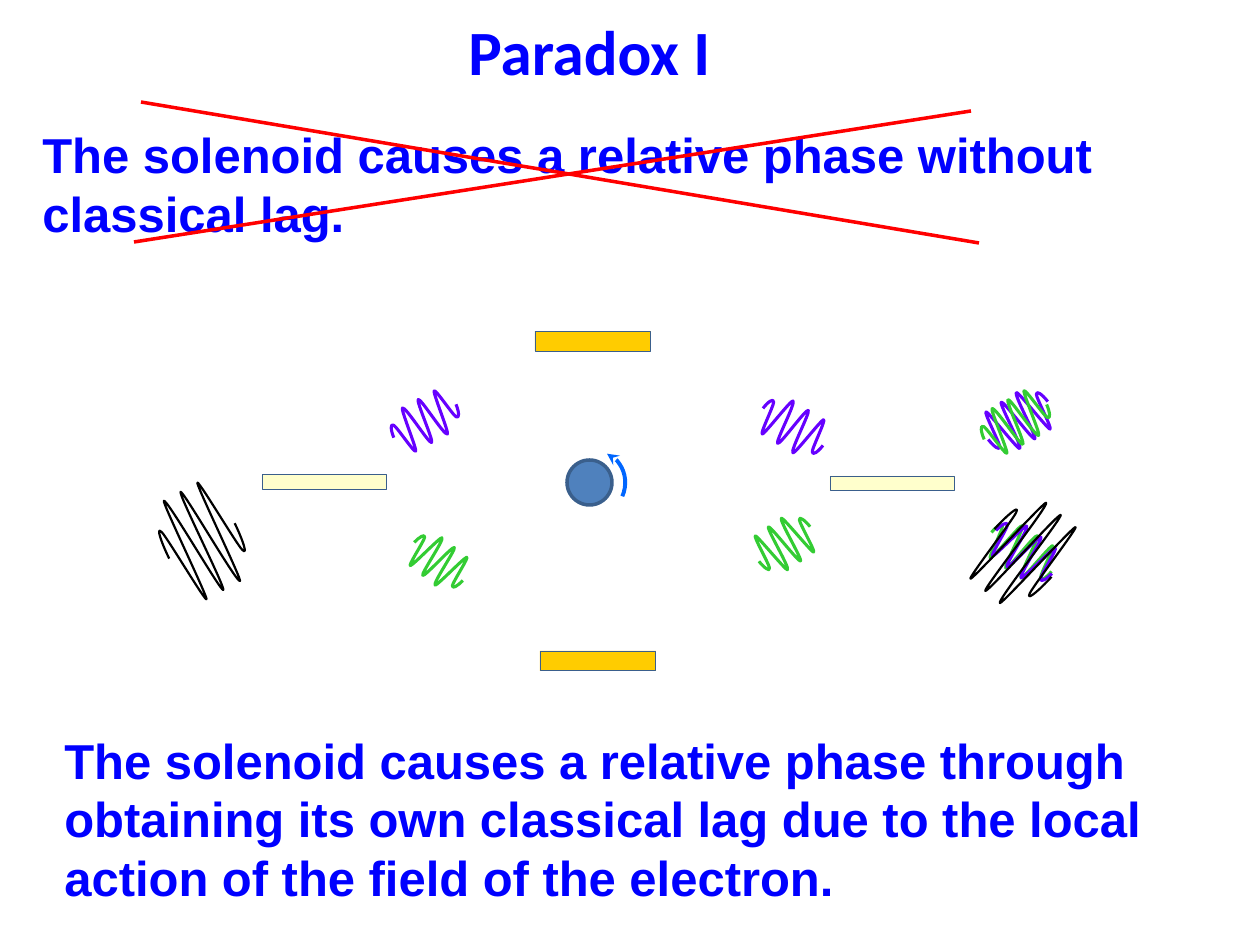
from pptx import Presentation
from pptx.dml.color import RGBColor
from pptx.enum.shapes import MSO_CONNECTOR, MSO_SHAPE
from pptx.enum.text import MSO_AUTO_SIZE
from pptx.oxml.ns import qn
from pptx.util import Emu, Pt
from lxml import etree

RECT, OVAL, ARC = MSO_SHAPE.RECTANGLE, MSO_SHAPE.OVAL, MSO_SHAPE.ARC
STRAIGHT = MSO_CONNECTOR.STRAIGHT
GROW = MSO_AUTO_SIZE.SHAPE_TO_FIT_TEXT
SCALE = 914400 / 126

THEME = {
    "text": "0000FF", "cross": "FF0000", "edge": "3A5F8C",
    "plate": "FFFFCC", "mirror": "FFCC00", "coil": "4F81BD", "spin": "0066FF",
    "black": "000000", "violet": "6600FF", "green": "33CC33",
    "title": {"name": "Calibri", "size": Pt(36), "bold": True},
    "body": {"name": "Arial", "size": Pt(28), "bold": True},
}

# First half of the wave in a unit box; the second half is its point mirror
HALF = [
    (0.01, 0.5), (0.02, 0.34), (0.06, 0.19), (0.09, 0.27), (0.12, 0.34),
    (0.16, 1), (0.19, 0.96), (0.22, 0.92), (0.28, 0.04), (0.31, 0.04),
    (0.36, 0.03), (0.4, 0.96), (0.44, 0.96), (0.48, 0.96),
]
WAVE = HALF + [(1 - x, 1 - y) for x, y in reversed(HALF)]

# Box, turn, flip, colour, line width
PACKETS = [
    ((389, 397, 72, 48), 331.8, False, "violet", 1.75),
    ((407, 539, 63, 45), 38.2, False, "green", 1.75),
    ((164, 483, 76, 116), 331.6, False, "black", 1.25),
    ((985, 528, 73, 48), 33, False, "green", 1.75),
    ((988, 528, 72, 48), 37.7, False, "violet", 1.75),
    ((757, 403, 72, 48), 31.7, False, "violet", 1.75),
    ((753, 519, 63, 50), 325.9, True, "green", 1.75),
    ((982, 394, 72, 53), 147.5, True, "violet", 1.75),
    ((979, 397, 73, 50), 330.8, False, "green", 1.75),
    ((985, 495, 76, 116), 39.9, False, "black", 1.25),
]


def px(n):
    return Emu(round(n * SCALE))


def color(key):
    return RGBColor.from_string(THEME[key])


def stroke(item, key, width):
    item.line.color.rgb = color(key)
    item.line.width = Pt(width)


def add_shape(slide, kind, box, fill, edge, width):
    shape = slide.shapes.add_shape(kind, *map(px, box))
    shape.shadow.inherit = False
    if fill:
        shape.fill.solid()
        shape.fill.fore_color.rgb = color(fill)
    else:
        shape.fill.background()
    stroke(shape, edge, width)
    return shape


def add_wave(slide, box, turn, flip, key, width):
    left, top, wide, high = box
    dots = [(px(left + x * wide), px(top + (1 - y if flip else y) * high))
            for x, y in WAVE]
    pen = slide.shapes.build_freeform(*dots[0])
    pen.add_line_segments(dots[1:], close=False)
    shape = pen.convert_to_shape()
    # Each three line steps become one cubic curve
    steps = list(shape.element.iter(qn("a:lnTo")))
    for i in range(0, len(steps), 3):
        curve = etree.Element(qn("a:cubicBezTo"))
        steps[i].addprevious(curve)
        for step in steps[i:i + 3]:
            curve.append(step[0])
            step.getparent().remove(step)
    shape.shadow.inherit = False
    shape.fill.background()
    stroke(shape, key, width)
    shape.rotation = turn


def add_line(slide, start, end):
    line = slide.shapes.add_connector(STRAIGHT, *map(px, start + end))
    stroke(line, "cross", 2)
    etree.SubElement(line.element.spPr, qn("a:effectLst"))


def add_spin(slide):
    arc = add_shape(slide, ARC, (563, 451, 62, 66), None, "spin", 2.25)
    arc.rotation = 23.5
    head = etree.SubElement(arc.line._get_or_add_ln(), qn("a:headEnd"))
    head.set("type", "stealth")


def add_text(slide, box, words, style, wrap=True):
    frame = slide.shapes.add_textbox(*map(px, box)).text_frame
    for name, value in {"word_wrap": wrap, "auto_size": GROW}.items():
        setattr(frame, name, value)
    run = frame.paragraphs[0].add_run()
    run.text = words
    for name, value in THEME[style].items():
        setattr(run.font, name, value)
    run.font.color.rgb = color("text")


def main():
    deck = Presentation()
    deck.slide_width, deck.slide_height = px(1260), px(945)
    slide = deck.slides.add_slide(deck.slide_layouts[6])

    # Beam splitters and mirrors
    for left, top in ((262, 475), (830, 476)):
        add_shape(slide, RECT, (left, top, 125, 15), "plate", "edge", 0.5)
    for left, top in ((535, 331), (540, 651)):
        add_shape(slide, RECT, (left, top, 116, 20), "mirror", "edge", 0.5)

    # Wave packets
    for packet in PACKETS:
        add_wave(slide, *packet)

    # Solenoid
    add_shape(slide, OVAL, (567, 460, 45, 45), "coil", "edge", 2)

    # Statements, the first one crossed out
    add_text(slide, (30, 118, 1210, 131),
             "The solenoid causes a relative phase without classical lag.", "body")
    add_text(slide, (52, 724, 1210, 190),
             "The solenoid causes a relative phase through obtaining its own "
             "classical lag due to the local action of the field of the electron.",
             "body")
    add_line(slide, (141, 102), (979, 243))
    add_line(slide, (134, 242), (971, 111))

    # Spin arrow and title
    add_spin(slide)
    add_text(slide, (456, 6, 286, 89), "Paradox I", "title", wrap=False)

    deck.save("out.pptx")


if __name__ == "__main__":
    main()
